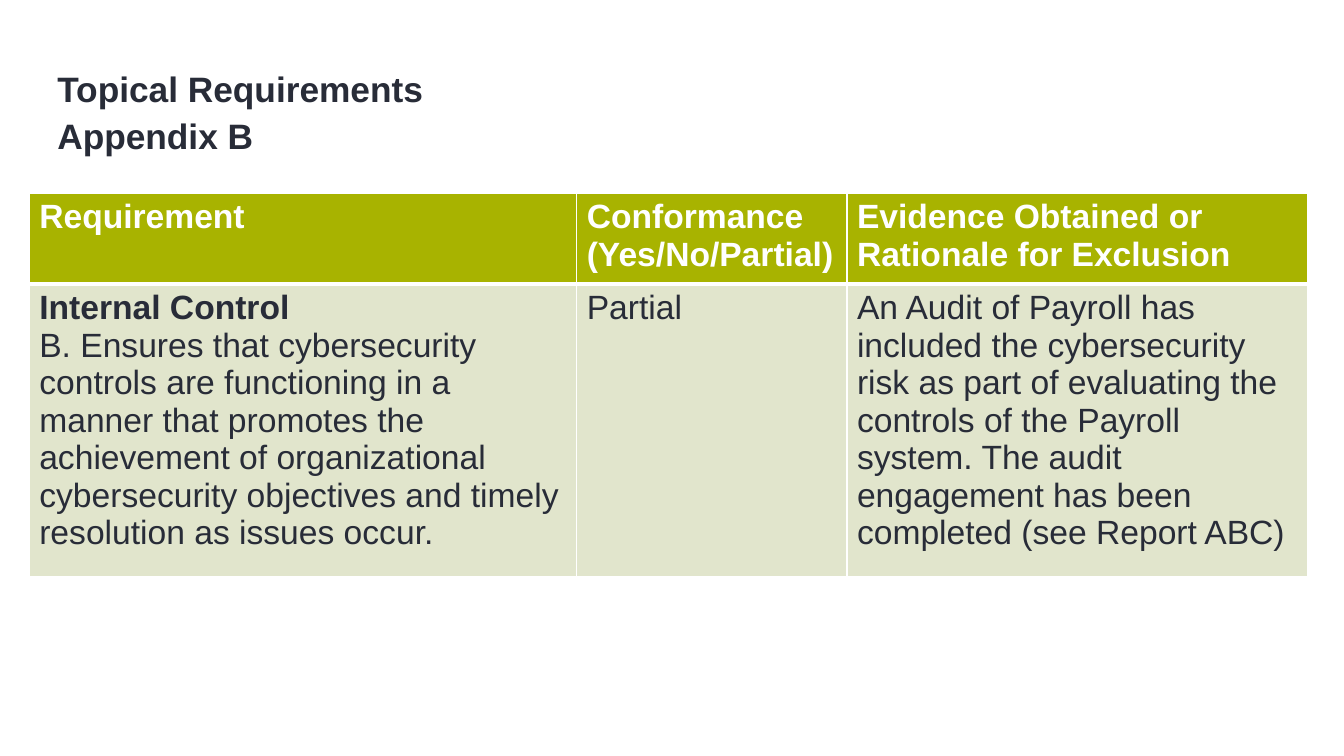
import pptx
import pptx.util
import pptx.dml.color
import pptx.enum.text
import pptx.oxml
import pptx.oxml.ns

Inches, Pt = pptx.util.Inches, pptx.util.Pt

FONT = "Arial"
COLORS = {"ink": "282C38", "white": "FFFFFF", "green": "A8B300", "pale": "E1E5CC"}
COL_WIDTHS = [5.43, 2.68, 4.57]
ROW_HEIGHTS = [0.87, 2.7]
HEADERS = ["Requirement", "Conformance\n(Yes/No/Partial)",
           "Evidence Obtained or Rationale for Exclusion"]
FINDINGS = [
    "Internal Control\nB. Ensures that cybersecurity controls are functioning in a manner "
    "that promotes the achievement of organizational cybersecurity objectives and timely "
    "resolution as issues occur.",
    "Partial",
    "An Audit of Payroll has included the cybersecurity risk as part of evaluating the "
    "controls of the Payroll system. The audit engagement has been completed "
    "(see Report ABC)",
]


def rgb(name):
    return pptx.dml.color.RGBColor.from_string(COLORS[name])


def format_runs(p, size, color, bold):
    for r in p.runs:
        r.font.name = FONT
        r.font.size = Pt(size)
        r.font.bold = bold
        r.font.color.rgb = rgb(color)


def add_title(s, text):
    sp = s.shapes.add_textbox(Inches(0.47), Inches(0.84), Inches(10.94), Inches(0.76))
    tf = sp.text_frame
    tf.word_wrap = True
    tf.vertical_anchor = pptx.enum.text.MSO_ANCHOR.BOTTOM
    p = tf.paragraphs[0]
    p.text = text
    p.line_spacing = 1.1
    format_runs(p, 25.2, "ink", True)


def set_borders(cell, widths):
    """Draw white borders; widths maps a side (L, R, T, B) to points."""
    tcPr = cell._tc.get_or_add_tcPr()
    for i, (side, width) in enumerate(widths.items()):
        tcPr.insert(i, pptx.oxml.parse_xml(
            f'<a:ln{side} {pptx.oxml.ns.nsdecls("a")} w="{Pt(width)}"><a:solidFill>'
            f'<a:srgbClr val="{COLORS["white"]}"/></a:solidFill></a:ln{side}>'))


def fill_cell(cell, text, fill, color, bold_lines, borders):
    cell.fill.solid()
    cell.fill.fore_color.rgb = rgb(fill)
    set_borders(cell, borders)
    cell.text_frame.text = text
    for i, p in enumerate(cell.text_frame.paragraphs):
        format_runs(p, 24, color, i < bold_lines)


def add_requirements_table(s):
    table = s.shapes.add_table(
        2, 3, Inches(0.29), Inches(1.92),
        Inches(sum(COL_WIDTHS)), Inches(sum(ROW_HEIGHTS))).table
    for column, width in zip(table.columns, COL_WIDTHS):
        column.width = Inches(width)
    for row, height in zip(table.rows, ROW_HEIGHTS):
        row.height = Inches(height)

    # Header row, with a thick rule below it
    for cell, text in zip(table.rows[0].cells, HEADERS):
        fill_cell(cell, text, "green", "white", 2, {"L": 1, "R": 1, "T": 1, "B": 3})

    # Findings row: only the requirement starts with a bold line
    for i, (cell, text) in enumerate(zip(table.rows[1].cells, FINDINGS)):
        fill_cell(cell, text, "pale", "ink", 1 if i == 0 else 0,
                  {"L": 1, "R": 1, "T": 3, "B": 1})


def main():
    prs = pptx.Presentation()
    prs.slide_width = Inches(13.33)
    prs.slide_height = Inches(7.5)
    s = prs.slides.add_slide(prs.slide_layouts[6])
    add_title(s, "Topical Requirements\vAppendix B")
    add_requirements_table(s)
    prs.save("out.pptx")


if __name__ == "__main__":
    main()
